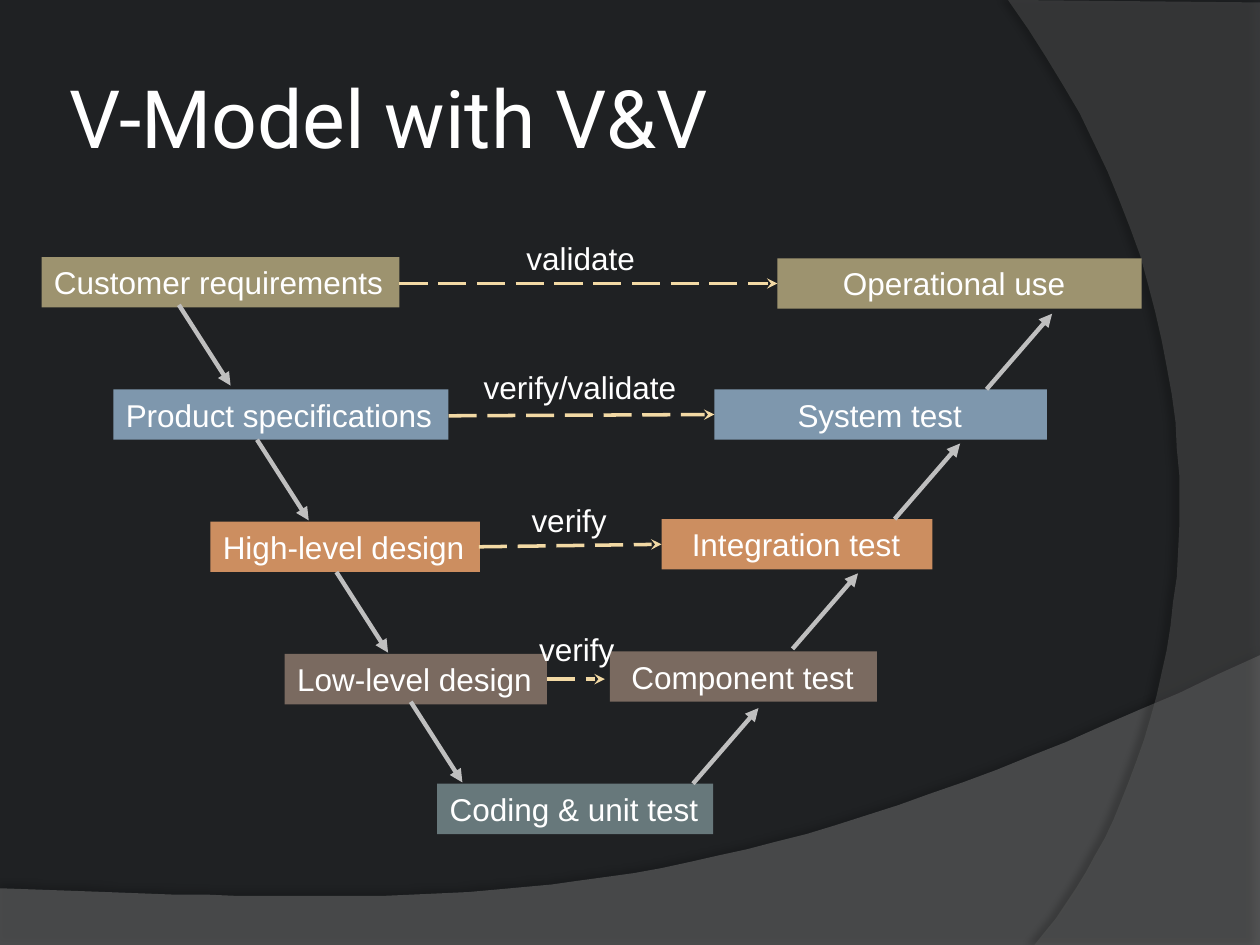
"""Build a V-model slide with verification and validation links."""
from typing import NamedTuple

from lxml.etree import SubElement as Sub
from pptx import Presentation
from pptx.dml.color import RGBColor as Rgb
from pptx.enum.dml import MSO_LINE as Dash
from pptx.enum.shapes import MSO_CONNECTOR as Link, MSO_SHAPE as Kind
from pptx.enum.text import MSO_ANCHOR as Anchor
from pptx.oxml.ns import qn
from pptx.util import Emu, Pt

PX = 9144
HIGH = 40
STEPS = 40

DARK = Rgb(0x1F, 0x21, 0x23)
WHITE = Rgb(0xFF, 0xFF, 0xFF)
BLACK = Rgb(0, 0, 0)
SWOOP = Rgb(0x7F, 0x7F, 0x7F)
SIDE = Rgb(0x5E, 0x5E, 0x5E)
OLIVE = Rgb(0x9D, 0x93, 0x6F)
BLUE = Rgb(0x7E, 0x97, 0xAD)
RUST = Rgb(0xCC, 0x8E, 0x60)
BROWN = Rgb(0x7A, 0x6A, 0x60)
TEAL = Rgb(0x67, 0x78, 0x7B)
GREY = Rgb(0xBF, 0xBF, 0xBF)
SAND = Rgb(0xF2, 0xD9, 0xA4)

Point = tuple[float, float]


class Stage(NamedTuple):
    text: str
    x: int
    y: int
    wide: int
    fill: Rgb
    pad: int = 10


class Label(NamedTuple):
    text: str
    x: int
    y: int
    wide: int


class Arrow(NamedTuple):
    x1: int
    y1: int
    x2: int
    y2: int


class Wave(NamedTuple):
    points: list[Point]
    fill: Rgb
    alpha: int
    shade: int
    dist: float
    turn: int


STAGES = [
    Stage("Customer requirements", 33, 204, 284, OLIVE),
    Stage("Operational use", 617, 205, 289, OLIVE, 52),
    Stage("Product specifications", 90, 309, 266, BLUE),
    Stage("System test", 567, 309, 264, BLUE, 66),
    Stage("High-level design", 167, 414, 214, RUST),
    Stage("Integration test", 525, 412, 215, RUST, 24),
    Stage("Low-level design", 226, 519, 208, BROWN),
    Stage("Component test", 484, 517, 212, BROWN, 17),
    Stage("Coding & unit test", 347, 622, 219, TEAL),
]
LABELS = [
    Label("validate", 408, 185, 107),
    Label("verify/validate", 374, 287, 174),
    Label("verify", 412, 393, 81),
    Label("verify", 418, 495, 81),
]
DOWN = [(142, 242), (204, 349), (267, 454), (326, 557)]
UP = [(550, 622), (629, 515), (710, 412), (783, 309)]
FLOW = [Arrow(x, y, x + 41, y + 64) for x, y in DOWN]
FLOW += [Arrow(x, y, x + 52, y - 60) for x, y in UP]
CHECKS = [
    Arrow(317, 225, 617, 225),
    Arrow(356, 330, 567, 329),
    Arrow(380, 434, 525, 432),
    Arrow(434, 539, 480, 539),
]


def curve(a: Point, b: Point, c: Point, d: Point) -> list[Point]:
    """Return points along a cubic curve."""
    times = [i / STEPS for i in range(STEPS + 1)]
    return [
        tuple(
            p * (1 - t) ** 3 + 3 * q * t * (1 - t) ** 2
            + 3 * r * t * t * (1 - t) + s * t ** 3
            for p, q, r, s in zip(a, b, c, d)
        )
        for t in times
    ]


WAVES = [
    Wave([(0, 751), (1000, 751)]
         + curve((1000, 520), (559, 729), (391, 719), (0, 705)),
         SWOOP, 45, 35, 3.5, 270),
    Wave([(1000, 2), (1000, 750)]
         + curve((821, 750), (935, 619), (1018, 300), (800, 0)),
         SIDE, 40, 45, 4, 180),
]


def fade(color, alpha: int) -> None:
    """Make a colour element partly clear."""
    Sub(color, qn("a:alpha"), val=str(alpha * 1000))


def draw_wave(slide, wave: Wave) -> None:
    """Draw a clear backdrop outline with a soft shadow."""
    first, *rest = wave.points
    pen = slide.shapes.build_freeform(*first, scale=PX)
    pen.add_line_segments(rest, close=True)
    shape = pen.convert_to_shape()
    shape.fill.solid()
    shape.fill.fore_color.rgb = wave.fill
    shape.line.fill.background()
    shape.shadow.inherit = False
    props = shape.element.spPr
    fade(props.find(qn("a:solidFill"))[0], wave.alpha)
    cast = Sub(props.find(qn("a:effectLst")), qn("a:outerShdw"),
               blurRad=str(Pt(4)), dist=str(Pt(wave.dist)),
               dir=str(wave.turn * 60000), rotWithShape="0")
    fade(Sub(cast, qn("a:srgbClr"), val=str(BLACK)), wave.shade)


def add_text(shape, text: str, size: int, font: str) -> None:
    """Add one styled run to a shape."""
    run = shape.text_frame.paragraphs[0].add_run()
    run.text = text
    run.font.size = Pt(size)
    run.font.name = font
    run.font.color.rgb = WHITE


def draw_stage(slide, stage: Stage) -> None:
    """Draw a filled box with text starting at its pad."""
    shape = slide.shapes.add_shape(
        Kind.RECTANGLE, stage.x * PX, stage.y * PX, stage.wide * PX, HIGH * PX)
    shape.shadow.inherit = False
    shape.fill.solid()
    shape.fill.fore_color.rgb = stage.fill
    shape.line.fill.background()
    frame = shape.text_frame
    frame.word_wrap = True
    frame.vertical_anchor = Anchor.TOP
    frame.margin_left = Emu(stage.pad * PX)
    frame.margin_right = 0
    frame.paragraphs[0].alignment = 1
    add_text(shape, stage.text, 18, "Arial")


def draw_label(slide, label: Label) -> None:
    """Draw the name of a check."""
    box = slide.shapes.add_textbox(
        label.x * PX, label.y * PX, label.wide * PX, HIGH * PX)
    box.text_frame.word_wrap = True
    box.text_frame.margin_right = 0
    add_text(box, label.text, 18, "Arial")


def draw_arrow(slide, arrow: Arrow, color: Rgb, width: float, tip: str,
               dash: Dash = Dash.SOLID) -> None:
    """Draw a line that ends in an arrowhead."""
    line = slide.shapes.add_connector(Link.STRAIGHT, *(v * PX for v in arrow))
    line.line.color.rgb = color
    line.line.width = Pt(width)
    line.line.dash_style = dash
    props = line.element.spPr
    Sub(props.find(qn("a:ln")), qn("a:tailEnd"), type=tip)
    Sub(props, qn("a:effectLst"))


def draw_title(slide, text: str) -> None:
    """Draw the slide heading."""
    box = slide.shapes.add_textbox(50 * PX, 30 * PX, 817 * PX, 125 * PX)
    frame = box.text_frame
    frame.word_wrap = True
    frame.vertical_anchor = Anchor.MIDDLE
    frame.margin_left = frame.margin_right = Emu(5 * PX)
    add_text(box, text, 46, "Roboto")


def main() -> None:
    """Build and save the slide."""
    deck = Presentation()
    deck.slide_width, deck.slide_height = Emu(1000 * PX), Emu(750 * PX)
    slide = deck.slides.add_slide(deck.slide_layouts[6])
    slide.background.fill.solid()
    slide.background.fill.fore_color.rgb = DARK
    for wave in WAVES:
        draw_wave(slide, wave)
    draw_title(slide, "V-Model with V&V")
    for stage in STAGES:
        draw_stage(slide, stage)
    for arrow in FLOW:
        draw_arrow(slide, arrow, GREY, 2.5, "triangle")
    for arrow in CHECKS:
        draw_arrow(slide, arrow, SAND, 2, "stealth", Dash.LONG_DASH)
    for label in LABELS:
        draw_label(slide, label)
    deck.save("out.pptx")


if __name__ == "__main__":
    main()
